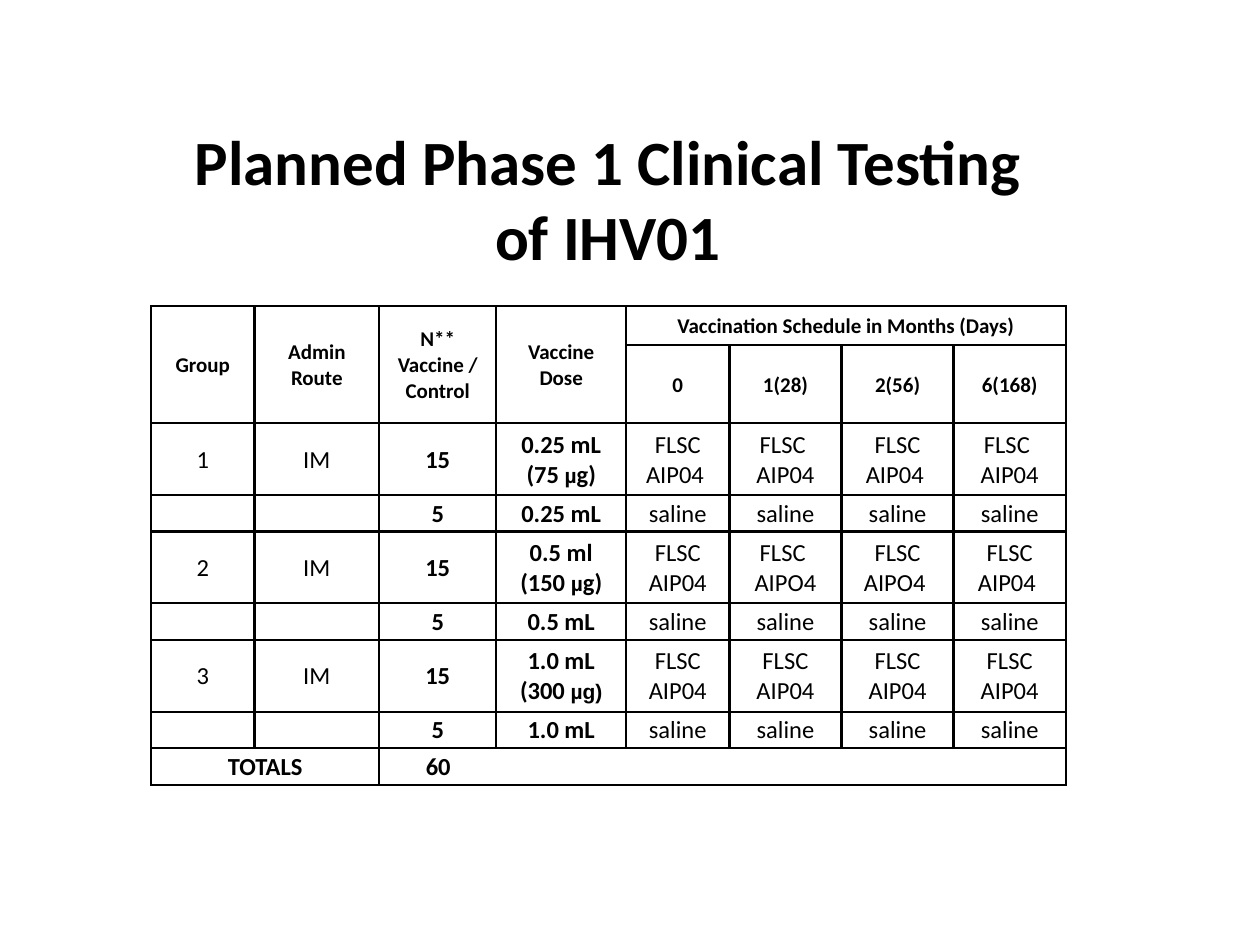
from lxml import etree
from pptx import Presentation
from pptx.dml.color import RGBColor
from pptx.enum import text
from pptx.oxml.ns import qn
from pptx.util import Inches, Pt

BLACK = "000000"


def color(value):
    return RGBColor.from_string(value)


def add_borders(cell):
    """Draw a 1.5 pt black line on all four sides of a cell."""
    properties = cell._tc.get_or_add_tcPr()
    for position, side in enumerate(("lnL", "lnR", "lnT", "lnB")):
        line = etree.Element(qn(f"a:{side}"), w=str(Pt(1.5)))
        fill = etree.SubElement(line, qn("a:solidFill"))
        etree.SubElement(fill, qn("a:srgbClr"), val=BLACK)
        properties.insert(position, line)


deck = Presentation()
deck.slide_width, deck.slide_height = Inches(10), Inches(7.5)
page = deck.slides.add_slide(deck.slide_layouts[5])

title = page.shapes.title
title.left, title.top = Inches(1.2), Inches(0.92)
title.width, title.height = Inches(7.25), Inches(0.7)
frame = title.text_frame
frame.text = "Planned Phase 1 Clinical Testing of IHV01"
frame.word_wrap = True
frame.auto_size = text.MSO_AUTO_SIZE.NONE
frame.vertical_anchor = text.MSO_ANCHOR.TOP
frame.paragraphs[0].alignment = text.PP_ALIGN.CENTER
title_font = frame.paragraphs[0].runs[0].font
for name, value in {"name": "Calibri", "size": Pt(36), "bold": True}.items():
    setattr(title_font, name, value)
title_font.color.rgb = color(BLACK)

# A line break starts a new paragraph; text between bars is set in Arial.
saline = ["saline"] * 4
rows = [
    ["Group", "Admin Route", "N**\nVaccine / Control", "Vaccine\nDose",
     "Vaccination Schedule in Months (Days)", "", "", ""],
    ["", "", "", "", "0", "1(28)", "2(56)", "6(168)"],
    ["1", "IM", "15", "0.25 mL\n(75 |µ|g)",
     "FLSC\nAIP04 ", "FLSC \nAIP04", "FLSC\nAIP04 ", "FLSC \nAIP04"],
    ["", "", "5", "0.25 mL"] + saline,
    ["2", "IM", "15", "0.5 ml\n(150 |µ|g)",
     "FLSC AIP04", "FLSC \nAIPO4", "FLSC\nAIPO4 ", "FLSC\nAIP04 "],
    ["", "", "5", "0.5 mL"] + saline,
    ["3", "IM", "15", "1.0 mL\n(300 |µg)"] + ["FLSC\nAIP04"] * 4,
    ["", "", "5", "1.0 mL"] + saline,
    ["TOTALS", "", "60", "", "", "", "", ""],
]
widths = [0.82, 0.99, 0.93, 1.03, 0.82, 0.89, 0.89, 0.89]
heights = [0.31, 0.43] + [0.57, 0.29] * 3 + [0.29]
header_rows, total_row = 2, len(rows) - 1

table = page.shapes.add_table(
    len(rows), len(widths), Inches(1.2), Inches(2.43),
    Inches(sum(widths)), Inches(sum(heights))).table
table.first_row = table.horz_banding = False
for column, width in zip(table.columns, widths):
    column.width = Inches(width)
for row, height in zip(table.rows, heights):
    row.height = Inches(height)

cell_format = {
    "margin_left": Inches(0.07), "margin_right": Inches(0.07),
    "margin_top": Inches(0.01), "margin_bottom": 0,
    "vertical_anchor": text.MSO_ANCHOR.MIDDLE,
}
for r, row in enumerate(rows):
    for c, content in enumerate(row):
        cell = table.cell(r, c)
        for name, value in cell_format.items():
            setattr(cell, name, value)
        cell.fill.background()
        add_borders(cell)
        size = 12 if r < header_rows else 14
        bold = r < header_rows or r == total_row or c in (2, 3)
        for i, line in enumerate(content.split("\n")):
            frame = cell.text_frame
            para = frame.paragraphs[0] if i == 0 else frame.add_paragraph()
            para.alignment = text.PP_ALIGN.CENTER
            if not line:
                etree.SubElement(para._p, qn("a:endParaRPr"), sz=str(size * 100))
                continue
            for j, part in enumerate(line.split("|")):
                span = para.add_run()
                span.text = part
                span.font.name = "Arial" if j == 1 else "Calibri"
                span.font.size = Pt(12 if j == 1 else size)
                span.font.bold = bold
                span.font.color.rgb = color(BLACK)

for c in range(4):
    table.cell(0, c).merge(table.cell(1, c))
table.cell(0, 4).merge(table.cell(0, 7))
table.cell(total_row, 0).merge(table.cell(total_row, 1))
table.cell(total_row, 2).merge(table.cell(total_row, 7))
total = table.cell(total_row, 2)
total.margin_left = Inches(0.37)
total.text_frame.paragraphs[0].alignment = text.PP_ALIGN.JUSTIFY

deck.save("out.pptx")
